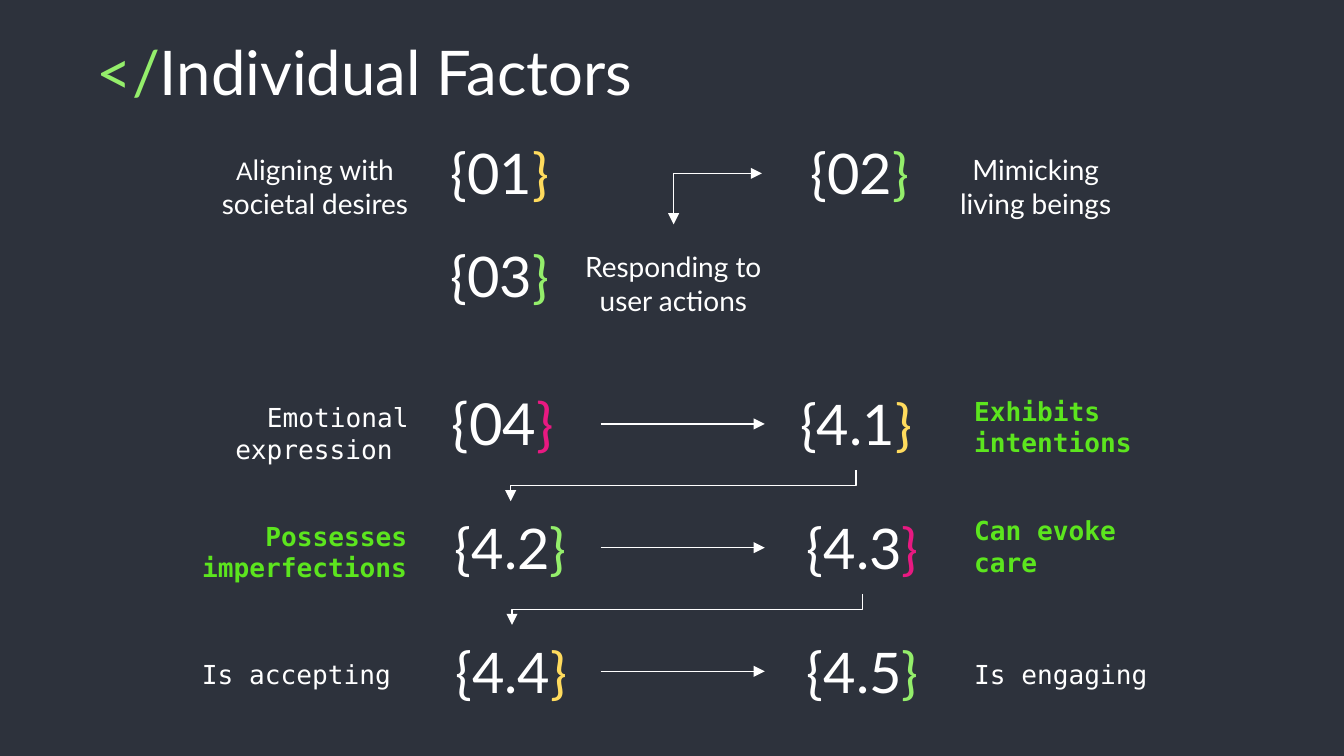
from dataclasses import dataclass

from lxml.etree import SubElement
from pptx import Presentation
from pptx.dml.color import RGBColor
from pptx.enum.shapes import MSO_CONNECTOR as Link
from pptx.enum.text import MSO_ANCHOR as Anchor, PP_ALIGN as Align
from pptx.oxml.ns import qn
from pptx.util import Pt

BACKGROUND = RGBColor(0x2D, 0x32, 0x3C)
WHITE = RGBColor(0xFF, 0xFF, 0xFF)
GREEN = RGBColor(0x94, 0xEE, 0x6B)
BRIGHT_GREEN = RGBColor(0x5C, 0xE5, 0x1E)
YELLOW = RGBColor(0xFF, 0xDB, 0x5D)
PINK = RGBColor(0xE8, 0x19, 0x81)

SANS = "Lato"
MONO = "DejaVu Sans Mono"
NUMBER_HEIGHT = 49.7
ROW_1, ROW_2 = 67.7, 123.1
FLOW_TOP, FLOW_STEP = 202.3, 66.25
FLOW_ROWS = [FLOW_TOP + FLOW_STEP * index for index in range(3)]
ARROW_LEFT, ARROW_RIGHT = 321.8, 409.7
CORNER_X, CORNER_Y = 360.9, 92.9


@dataclass(frozen=True)
class Frame:
    left: float
    top: float
    width: float
    height: float


@dataclass(frozen=True)
class Piece:
    text: str
    size: float
    color: RGBColor = WHITE
    font: str = SANS
    bold: bool = False


@dataclass(frozen=True)
class Number:
    text: str
    brace: RGBColor
    left: float
    top: float
    width: float = 105.1
    size: float = 30


@dataclass(frozen=True)
class Label:
    frame: Frame
    pieces: tuple[Piece, ...]
    align: Align
    anchor: Anchor = Anchor.TOP
    space_after: float = 0


def add_text(slide, label: Label) -> None:
    frame = label.frame
    box = slide.shapes.add_textbox(
        Pt(frame.left), Pt(frame.top), Pt(frame.width), Pt(frame.height))
    text_frame = box.text_frame
    text_frame.word_wrap = True
    text_frame.vertical_anchor = label.anchor
    text_frame.margin_left = text_frame.margin_right = Pt(7.2)
    text_frame.margin_top = text_frame.margin_bottom = Pt(7.2)
    paragraph = text_frame.paragraphs[0]
    paragraph.alignment = label.align
    paragraph.space_after = Pt(label.space_after)
    for piece in label.pieces:
        run = paragraph.add_run()
        run.text = piece.text
        run.font.size = Pt(piece.size)
        run.font.name = piece.font
        run.font.bold = piece.bold
        run.font.color.rgb = piece.color


def add_number(slide, number: Number) -> None:
    frame = Frame(number.left, number.top, number.width, NUMBER_HEIGHT)
    pieces = (Piece("{" + number.text, number.size),
              Piece("}", number.size, number.brace))
    add_text(slide, Label(frame, pieces, Align.CENTER, Anchor.BOTTOM))


def add_arrow(slide, x1: float, y1: float, x2: float, y2: float,
              kind: Link = Link.STRAIGHT):
    connector = slide.shapes.add_connector(kind, Pt(x1), Pt(y1), Pt(x2), Pt(y2))
    connector.line.color.rgb = WHITE
    connector.line.width = Pt(0.75)
    SubElement(connector.line._get_or_add_ln(), qn("a:tailEnd"), type="triangle")
    SubElement(connector._element.spPr, qn("a:effectLst"))
    return connector


def add_return_arrow(slide, x1: float, y1: float, x2: float, y2: float) -> None:
    center_x, center_y = (x1 + x2) / 2, (y1 + y2) / 2
    half_span, half_drop = (x1 - x2) / 2, (y2 - y1) / 2
    connector = add_arrow(
        slide, center_x - half_drop, center_y - half_span,
        center_x + half_drop, center_y + half_span, Link.ELBOW)
    connector._element.spPr.find(qn("a:xfrm")).set("rot", "5400000")


def mono_label(text: str, frame: Frame, align: Align, strong: bool = False,
               anchor: Anchor = Anchor.TOP) -> Label:
    color = BRIGHT_GREEN if strong else WHITE
    return Label(frame, (Piece(text, 14, color, MONO, strong),), align, anchor)


def sans_label(frame: Frame, *pieces: Piece) -> Label:
    return Label(frame, pieces, Align.CENTER, Anchor.MIDDLE, 10)


TITLE = Label(Frame(44.6, 10.8, 607, 45.4),
              (Piece("</", 33, GREEN), Piece("Individual Factors", 33)), Align.LEFT)

NUMBERS = [
    Number("01", YELLOW, 215.3, ROW_1),
    Number("02", GREEN, 408.2, ROW_1),
    Number("03", GREEN, 215.3, ROW_2),
    Number("04", PINK, 216.7, FLOW_ROWS[0], size=31),
    Number("4.1", YELLOW, 409.7, FLOW_ROWS[0], 97.9),
    Number("4.2", GREEN, 225.4, FLOW_ROWS[1], 96.5),
    Number("4.3", PINK, 409.7, FLOW_ROWS[1]),
    Number("4.4", YELLOW, 226.1, FLOW_ROWS[2], 95.8),
    Number("4.5", GREEN, 409.7, FLOW_ROWS[2]),
]

LABELS = [
    sans_label(Frame(105.1, 74.9, 127.4, 49.7),
               Piece("A", 13), Piece("ligning with societal desires", 15)),
    sans_label(Frame(495.4, 74.9, 118.8, 49.7), Piece("Mimicking living beings", 15)),
    sans_label(Frame(301, 133.9, 119.5, 36), Piece("Responding to user actions", 15)),
    mono_label("Emotional expression ", Frame(89.3, 208.1, 136.8, 45.4), Align.RIGHT),
    mono_label("Exhibits intentions", Frame(514.8, 203.8, 105.1, 49.7), Align.LEFT,
               True, Anchor.MIDDLE),
    mono_label("Possesses imperfections", Frame(97.9, 271.4, 127.4, 45.4),
               Align.RIGHT, True),
    mono_label("Can evoke care", Frame(514.8, 268.6, 105.1, 51.1), Align.LEFT, True),
    mono_label("Is accepting", Frame(62.6, 345.6, 154.1, 40.3), Align.RIGHT),
    mono_label("Is engaging", Frame(514.8, 345.6, 131, 40.3), Align.LEFT),
]


def main() -> None:
    presentation = Presentation()
    presentation.slide_width = Pt(720)
    presentation.slide_height = Pt(405)
    slide = presentation.slides.add_slide(presentation.slide_layouts[6])
    slide.background.fill.solid()
    slide.background.fill.fore_color.rgb = BACKGROUND

    add_text(slide, TITLE)
    for number in NUMBERS:
        add_number(slide, number)
    for label in LABELS:
        add_text(slide, label)

    add_arrow(slide, CORNER_X, CORNER_Y, 408.2, CORNER_Y)
    add_arrow(slide, CORNER_X, CORNER_Y, CORNER_X, 120.2)
    for top in FLOW_ROWS:
        middle = top + NUMBER_HEIGHT / 2
        add_arrow(slide, ARROW_LEFT, middle, ARROW_RIGHT, middle)
    turns = ((458.6, 273.6), (462.2, 274.3))
    for (start_x, end_x), top, next_top in zip(turns, FLOW_ROWS, FLOW_ROWS[1:]):
        add_return_arrow(slide, start_x, top + NUMBER_HEIGHT, end_x, next_top)

    presentation.save("out.pptx")


if __name__ == "__main__":
    main()
